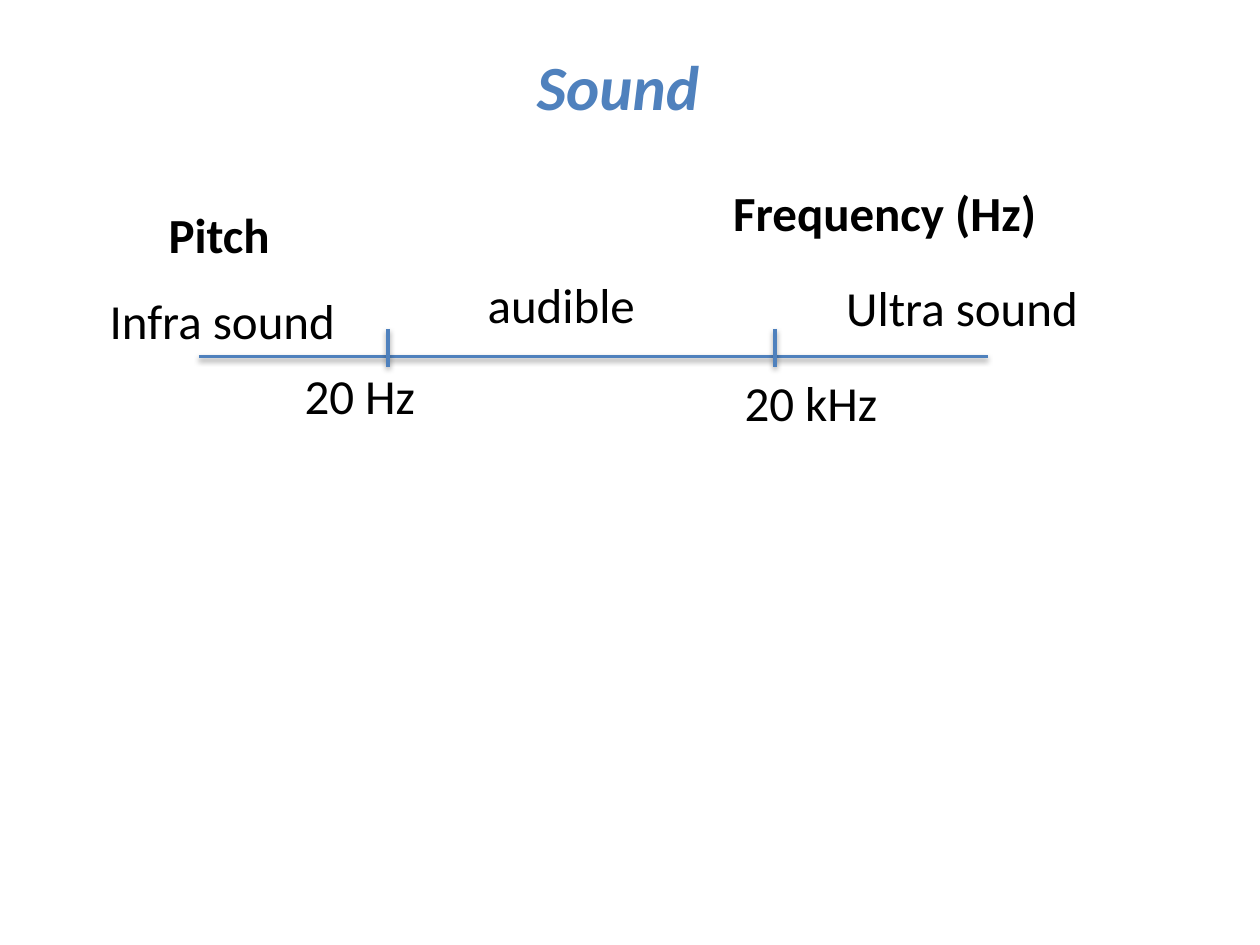
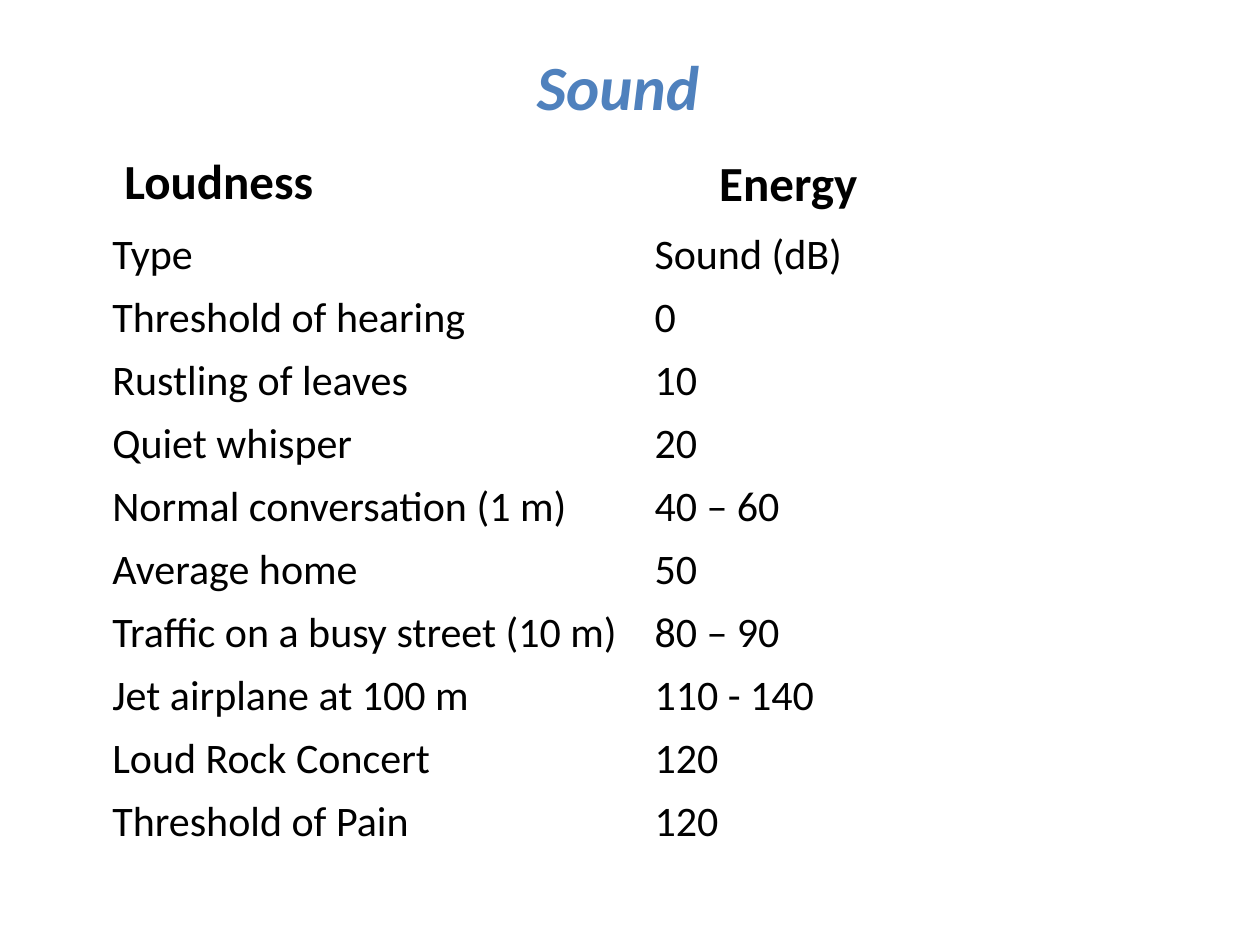
from dataclasses import dataclass

from lxml import etree
from pptx import Presentation
from pptx.dml.color import RGBColor
from pptx.enum.shapes import MSO_CONNECTOR
from pptx.enum.text import MSO_AUTO_SIZE, PP_ALIGN
from pptx.oxml.ns import qn
from pptx.slide import Slide
from pptx.text.text import Font
from pptx.util import Cm, Pt

STRAIGHT = MSO_CONNECTOR.STRAIGHT
FIT_SHAPE = MSO_AUTO_SIZE.SHAPE_TO_FIT_TEXT
CENTER = PP_ALIGN.CENTER

FONT = "Calibri"
BLACK = "000000"
BLUE = "4F81BD"
LABEL_SIZE = 28
TABLE_SIZE = 24
LABEL_HEIGHT = 1.45

AXIS_LEFT, AXIS_RIGHT, AXIS_Y = 4.01, 19.91, 7.19
TICK_TOP, TICK_BOTTOM = 6.63, 7.39
TICKS = (7.82, 15.62)

TABLE_LEFT, TABLE_TOP = 2.01, 4.5
COLUMN_WIDTH, ROW_HEIGHT = 10.93, 1.27


@dataclass(frozen=True)
class Label:
    """A one-line text; lengths in centimetres."""
    text: str
    left: float
    top: float
    width: float
    bold: bool = False


PITCH_LABELS = (
    Label("Frequency (Hz)", 14.53, 3.56, 7.24, bold=True),
    Label("Pitch", 3.15, 3.99, 3.73, bold=True),
    Label("20 Hz", 5.89, 7.24, 2.82),
    Label("20 kHz", 14.76, 7.39, 3.96),
    Label("audible", 9.58, 5.41, 4.93),
    Label("Infra sound", 1.96, 5.74, 6.32),
    Label("Ultra sound", 16.81, 5.46, 6.25),
)

LOUDNESS_LABELS = (
    Label("Energy", 14.25, 2.95, 7.24, bold=True),
    Label("Loudness", 2.26, 2.9, 7.24, bold=True),
)

SOUND_LEVELS = (
    ("Type", "Sound (dB)"),
    ("Threshold of hearing", "0"),
    ("Rustling of leaves", "10"),
    ("Quiet whisper", "20"),
    ("Normal conversation (1 m)", "40 – 60"),
    ("Average home", "50"),
    ("Traffic on a busy street (10 m)", "80 – 90"),
    ("Jet airplane at 100 m", "110 - 140"),
    ("Loud Rock Concert", "120"),
    ("Threshold of Pain", "120"),
)


def color(value: str) -> RGBColor:
    return RGBColor.from_string(value)


def style_font(font: Font, size: float, fill: str = BLACK, bold: bool = False) -> None:
    font.name = FONT
    font.size = Pt(size)
    font.bold = bold
    font.color.rgb = color(fill)


def add_title(page: Slide, text: str) -> None:
    box = page.shapes.add_textbox(Cm(10.39), Cm(0.84), Cm(4.14), Cm(1.8))
    box.text_frame.word_wrap = False
    box.text_frame.auto_size = FIT_SHAPE
    para = box.text_frame.paragraphs[0]
    para.text = text
    para.alignment = CENTER
    style_font(para.font, 36, BLUE, bold=True)
    para.font.italic = True


def add_label(page: Slide, label: Label) -> None:
    box = page.shapes.add_textbox(
        Cm(label.left), Cm(label.top), Cm(label.width), Cm(LABEL_HEIGHT))
    box.text_frame.word_wrap = True
    box.text_frame.auto_size = FIT_SHAPE
    para = box.text_frame.paragraphs[0]
    para.text = label.text
    style_font(para.font, LABEL_SIZE, bold=label.bold)


def add_line(page: Slide, x1: float, y1: float, x2: float, y2: float) -> None:
    """Draw a blue line with a soft shadow below it."""
    line = page.shapes.add_connector(STRAIGHT, Cm(x1), Cm(y1), Cm(x2), Cm(y2))
    line.line.color.rgb = color(BLUE)
    line.line.width = Pt(2)
    effects = etree.SubElement(line._element.spPr, qn("a:effectLst"))
    shadow = etree.SubElement(
        effects, qn("a:outerShdw"), blurRad=str(Pt(3.1)), dist=str(Pt(1.6)),
        dir="5400000", rotWithShape="0")
    shade = etree.SubElement(shadow, qn("a:srgbClr"), val=BLACK)
    etree.SubElement(shade, qn("a:alpha"), val="38000")


def add_level_table(page: Slide) -> None:
    rows, columns = len(SOUND_LEVELS), len(SOUND_LEVELS[0])
    table = page.shapes.add_table(
        rows, columns, Cm(TABLE_LEFT), Cm(TABLE_TOP),
        Cm(COLUMN_WIDTH * columns), Cm(ROW_HEIGHT * rows)).table
    table.first_row = False
    table.horz_banding = False
    for row, texts in enumerate(SOUND_LEVELS):
        for column, text in enumerate(texts):
            cell = table.cell(row, column)
            cell.fill.background()
            para = cell.text_frame.paragraphs[0]
            para.text = text
            style_font(para.font, TABLE_SIZE)


def add_page(deck: Presentation, labels: tuple[Label, ...]) -> Slide:
    page = deck.slides.add_slide(deck.slide_layouts[6])
    add_title(page, "Sound")
    for label in labels:
        add_label(page, label)
    return page


def main() -> None:
    deck = Presentation()
    deck.slide_width, deck.slide_height = Cm(25.4), Cm(19.05)

    pitch_page = add_page(deck, PITCH_LABELS)
    add_line(pitch_page, AXIS_LEFT, AXIS_Y, AXIS_RIGHT, AXIS_Y)
    for x in TICKS:
        add_line(pitch_page, x, TICK_TOP, x, TICK_BOTTOM)

    loudness_page = add_page(deck, LOUDNESS_LABELS)
    add_level_table(loudness_page)

    deck.save("out.pptx")


if __name__ == "__main__":
    main()
